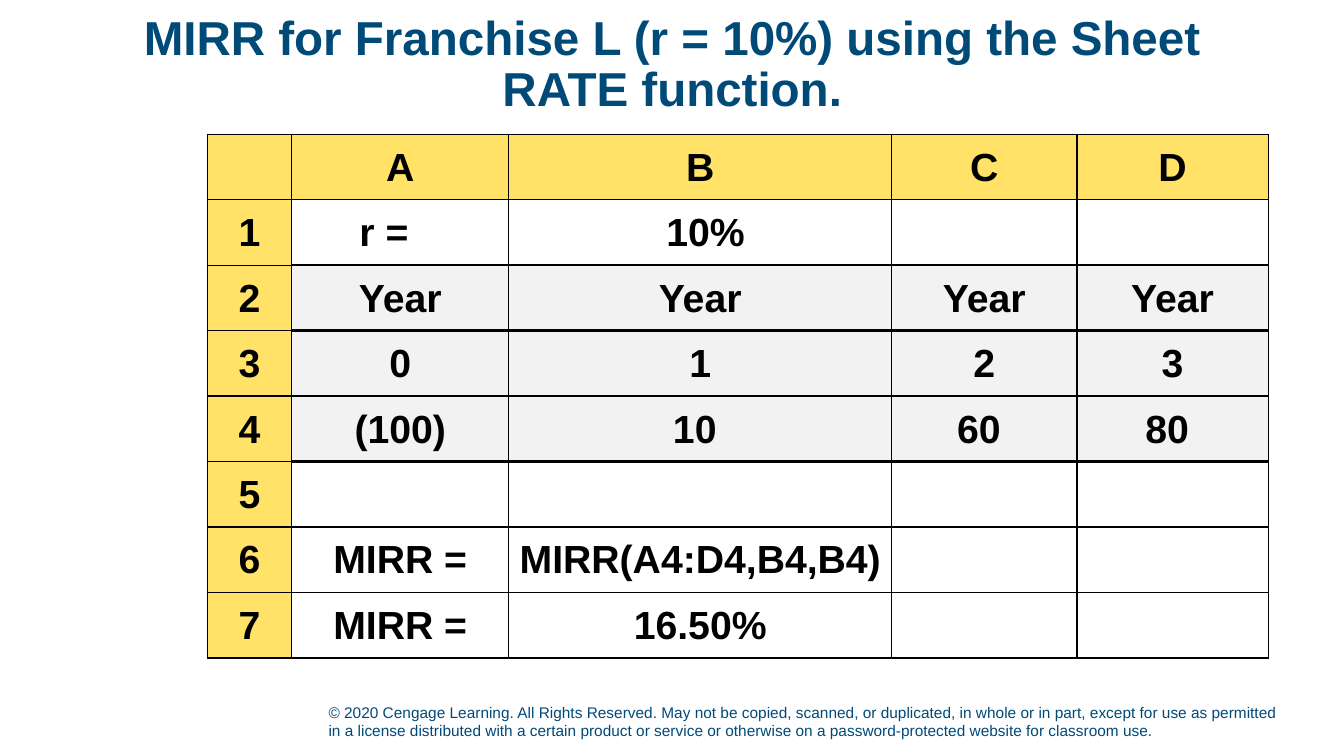
from pptx import Presentation
from pptx.dml.color import RGBColor
from pptx.enum.text import MSO_ANCHOR as Anchor, PP_ALIGN as Align
from pptx.oxml import parse_xml
from pptx.oxml.ns import nsdecls
from pptx.util import Cm, Pt

NAVY, BLACK, GOLD, GRAY, WHITE = "004A78", "000000", "FFE267", "F2F2F2", "FFFFFF"
TITLE = "MIRR for Franchise L (r = 10%) using the Sheet RATE function."
NOTICE = (
    "© 2020 Cengage Learning. All Rights Reserved. May not be copied, scanned, "
    "or duplicated, in whole or in part, except for use as permitted in a license "
    "distributed with a certain product or service or otherwise on a "
    "password-protected website for classroom use."
)
SHEET = [
    ["", "A", "B", "C", "D"],
    ["1", "r =", " 10%", "", ""],
    ["2", "Year", "Year", "Year", "Year"],
    ["3", "0", "1", "2", "3"],
    ["4", "(100)", "10 ", "60 ", "80 "],
    ["5", "", "", "", ""],
    ["6", "MIRR =", "MIRR(A4:D4,B4,B4)", "", ""],
    ["7", "MIRR =", "16.50%", "", ""],
]
WIDTHS = [2.13, 5.47, 9.65, 4.67, 4.82]
FLOWS = range(2, 5)  # rows of the cash flow block


def color(code):
    return RGBColor.from_string(code)


def style(para, size, code, bold=False, align=Align.LEFT):
    para.alignment = align
    font = para.font
    font.name, font.size, font.bold = "Arial", Pt(size), bold
    font.color.rgb = color(code)


def add_text(slide, box, text, anchor):
    frame = slide.shapes.add_textbox(*map(Cm, box)).text_frame
    frame.word_wrap = True
    frame.vertical_anchor = anchor
    frame.text = text
    return frame.paragraphs[0]


def add_title(slide, box):
    para = add_text(slide, box, TITLE, Anchor.MIDDLE)
    para.line_spacing = 0.9
    style(para, 34, NAVY, True, Align.CENTER)


def add_notice(slide, box):
    style(add_text(slide, box, NOTICE, Anchor.BOTTOM), 11, NAVY)


def set_edge(cell, side, width):
    cell._tc.get_or_add_tcPr().append(parse_xml(
        f'<a:ln{side} {nsdecls("a")} w="{Pt(width)}"><a:solidFill>'
        f'<a:srgbClr val="{BLACK}"/></a:solidFill></a:ln{side}>'))


def fill_cell(cell, row, col):
    # Edges come before the fill; thick ones rule off the cash flows
    thick = {"T": row - 1, "B": row}
    for side in "LRTB":
        heavy = col > 0 and thick.get(side) in range(1, 5)
        set_edge(cell, side, 2.25 if heavy else 1)
    cell.fill.solid()
    head = row == 0 or col == 0
    cell.fill.fore_color.rgb = color(GOLD if head else GRAY if row in FLOWS else WHITE)

    # Text
    cell.margin_left = cell.margin_right = cell.margin_top = Cm(0.03)
    cell.margin_bottom = 0
    cell.vertical_anchor = Anchor.MIDDLE
    cell.text = SHEET[row][col]
    style(cell.text_frame.paragraphs[0], 28, BLACK, True, Align.CENTER)


def add_sheet(slide, box):
    rows, cols = len(SHEET), len(WIDTHS)
    table = slide.shapes.add_table(rows, cols, *map(Cm, box)).table
    for col, width in enumerate(WIDTHS):
        table.columns[col].width = Cm(width)
    for row in range(rows):
        table.rows[row].height = Cm(box[3] / rows)
        for col in range(cols):
            fill_cell(table.cell(row, col), row, col)
    table.cell(1, 1).margin_right = Cm(0.85)  # shifts "r =" to the left


def main():
    deck = Presentation()
    deck.slide_width, deck.slide_height = Cm(33.87), Cm(19.05)
    slide = deck.slides.add_slide(deck.slide_layouts[6])
    add_notice(slide, (8.03, 17.5, 24.46, 1.27))
    add_title(slide, (2.34, 0.38, 29.21, 2.54))
    add_sheet(slide, (5.22, 3.38, sum(WIDTHS), 13.2))
    deck.save("out.pptx")


if __name__ == "__main__":
    main()
